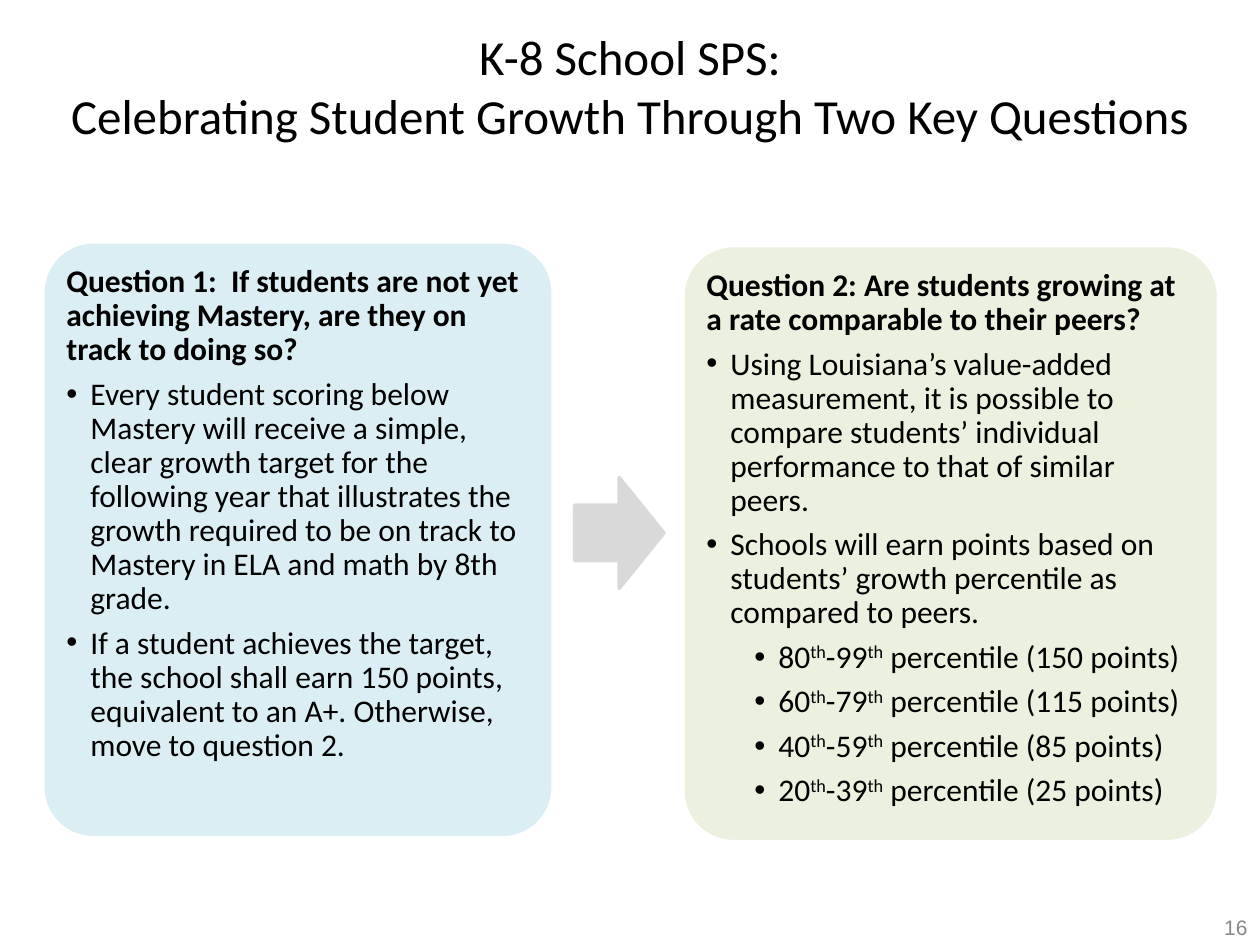
from lxml import etree
from pptx import Presentation
from pptx.dml.color import RGBColor
from pptx.enum.shapes import MSO_SHAPE
from pptx.enum.text import MSO_ANCHOR, PP_ALIGN
from pptx.oxml.ns import qn
from pptx.util import Inches, Pt

ROUNDED, ARROW = MSO_SHAPE.ROUNDED_RECTANGLE, MSO_SHAPE.RIGHT_ARROW
TOP, MIDDLE = MSO_ANCHOR.TOP, MSO_ANCHOR.MIDDLE
LEFT, CENTER, RIGHT = PP_ALIGN.LEFT, PP_ALIGN.CENTER, PP_ALIGN.RIGHT

CARD_HEIGHT = 4.73
CORNER_RADIUS = 0.4
HANGING = 0.19
INDENTS = {1: 0.19, 2: 0.57}

QUESTION_1 = [
    (0, "Question 1:  If students are not yet achieving Mastery, are they on track to doing so?"),
    (1, "Every student scoring below Mastery will receive a simple, clear growth target for the "
        "following year that illustrates the growth required to be on track to Mastery in ELA "
        "and math by 8th grade."),
    (1, "If a student achieves the target, the school shall earn 150 points, equivalent to an A+. "
        "Otherwise, move to question 2."),
]
QUESTION_2 = [
    (0, "Question 2: Are students growing at a rate comparable to their peers?"),
    (1, "Using Louisiana’s value-added measurement, it is possible to compare students’ "
        "individual performance to that of similar peers."),
    (1, "Schools will earn points based on students’ growth percentile as compared to peers."),
]
PERCENTILE_POINTS = [(80, 99, 150), (60, 79, 115), (40, 59, 85), (20, 39, 25)]
QUESTION_2 += [
    (2, f"{low}^th^-{high}^th^ percentile ({points} points)")
    for low, high, points in PERCENTILE_POINTS
]


def rgb(value):
    return RGBColor.from_string(value)


def set_all(target, values):
    for name, value in values.items():
        setattr(target, name, value)


class SlideBuilder:
    font = "Calibri"
    ink = "000000"

    def __init__(self, s):
        self.s = s

    def run(self, p, text, size, bold=False, color=ink, font=font):
        r = p.add_run()
        r.text = text
        set_all(r.font, {"name": font, "size": Pt(size), "bold": bold})
        r.font.color.rgb = rgb(color)
        return r

    def text(self, box, text, align, size, **style):
        tf = self.s.shapes.add_textbox(*map(Inches, box)).text_frame
        set_all(tf, {"word_wrap": True, "vertical_anchor": MIDDLE})
        p = tf.paragraphs[0]
        p.alignment = align
        for i, line in enumerate(text.split("\n")):
            if i:
                p.add_line_break()
            self.run(p, line, size, **style)

    def shape(self, kind, box, fill, line):
        sp = self.s.shapes.add_shape(kind, *map(Inches, box))
        sp.shadow.inherit = False
        sp.fill.solid()
        sp.fill.fore_color.rgb = rgb(fill)
        sp.line.color.rgb = rgb(line)
        sp.line.width = Pt(2)
        return sp

    def bullet(self, p, level):
        pPr = p._p.get_or_add_pPr()
        pPr.set("marL", str(Inches(INDENTS[level])))
        pPr.set("indent", str(-Inches(HANGING)))
        etree.SubElement(pPr, qn("a:buFont")).set("typeface", "Arial")
        etree.SubElement(pPr, qn("a:buChar")).set("char", "•")

    def card(self, left, top, width, fill, items):
        sp = self.shape(ROUNDED, (left, top, width, CARD_HEIGHT), fill, "FFFFFF")
        sp.adjustments[0] = CORNER_RADIUS / min(width, CARD_HEIGHT)
        tf = sp.text_frame
        set_all(tf, {"word_wrap": True, "vertical_anchor": TOP})
        sides = ("left", "top", "right", "bottom")
        set_all(tf, {f"margin_{side}": Inches(0.07) for side in sides})
        for i, (level, text) in enumerate(items):
            p = tf.add_paragraph() if i else tf.paragraphs[0]
            if level:
                self.bullet(p, level)
            set_all(p, {"level": level, "alignment": LEFT,
                        "line_spacing": 0.9, "space_after": Pt(6)})
            for j, part in enumerate(text.split("^")):
                r = self.run(p, part, 18, bold=level == 0)
                if j % 2:
                    r.font._element.set("baseline", "30000")


def main():
    prs = Presentation()
    set_all(prs, {"slide_width": Inches(10), "slide_height": Inches(7.5)})
    b = SlideBuilder(prs.slides.add_slide(prs.slide_layouts[6]))
    b.text((0, -0.17, 10, 1.69),
           "K-8 School SPS:\nCelebrating Student Growth Through Two Key Questions", CENTER, 28)
    b.text((7.67, 7.17, 2.33, 0.38), "16", RIGHT, 12, color="888888", font="Arial")
    b.card(0.34, 1.92, 4.05, "DBEEF4", QUESTION_1)
    b.card(5.42, 1.95, 4.25, "EBF1DE", QUESTION_2)
    b.shape(ARROW, (4.56, 3.79, 0.71, 0.88), "D9D9D9", "D9D9D9")
    prs.save("out.pptx")


if __name__ == "__main__":
    main()
